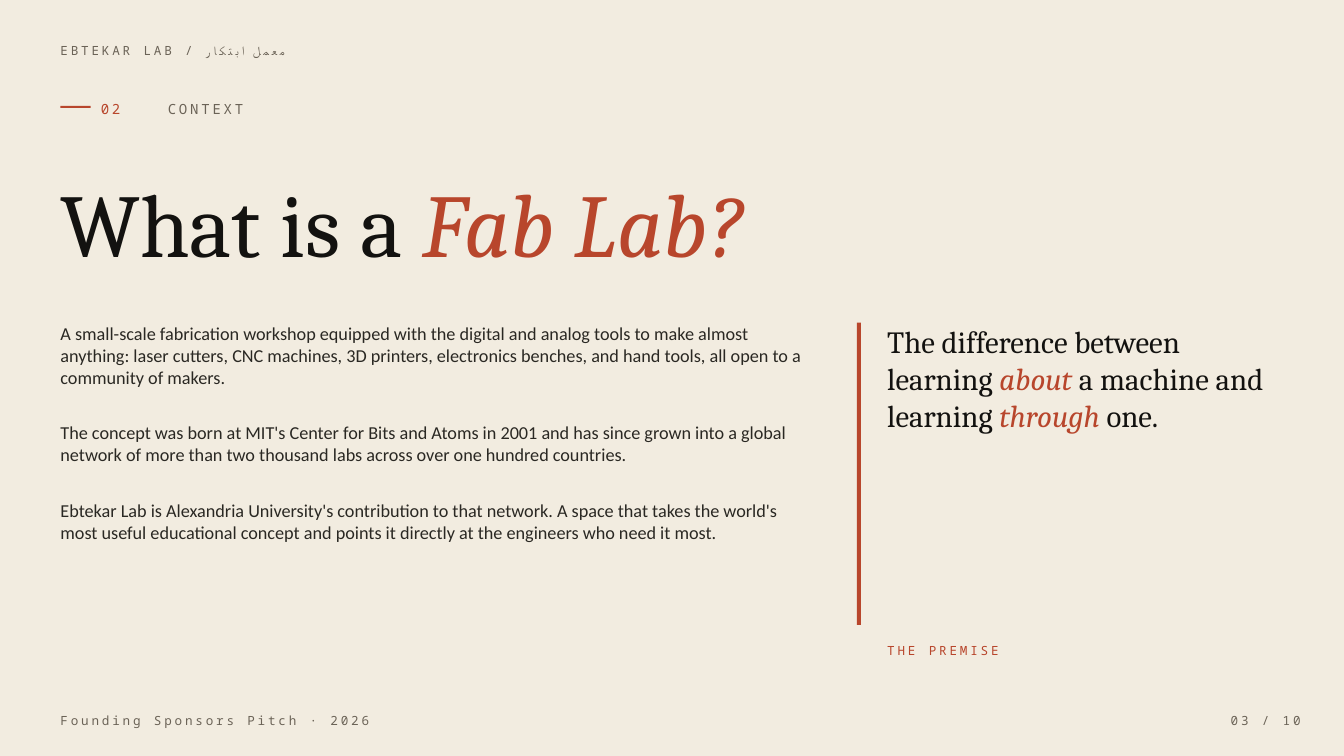
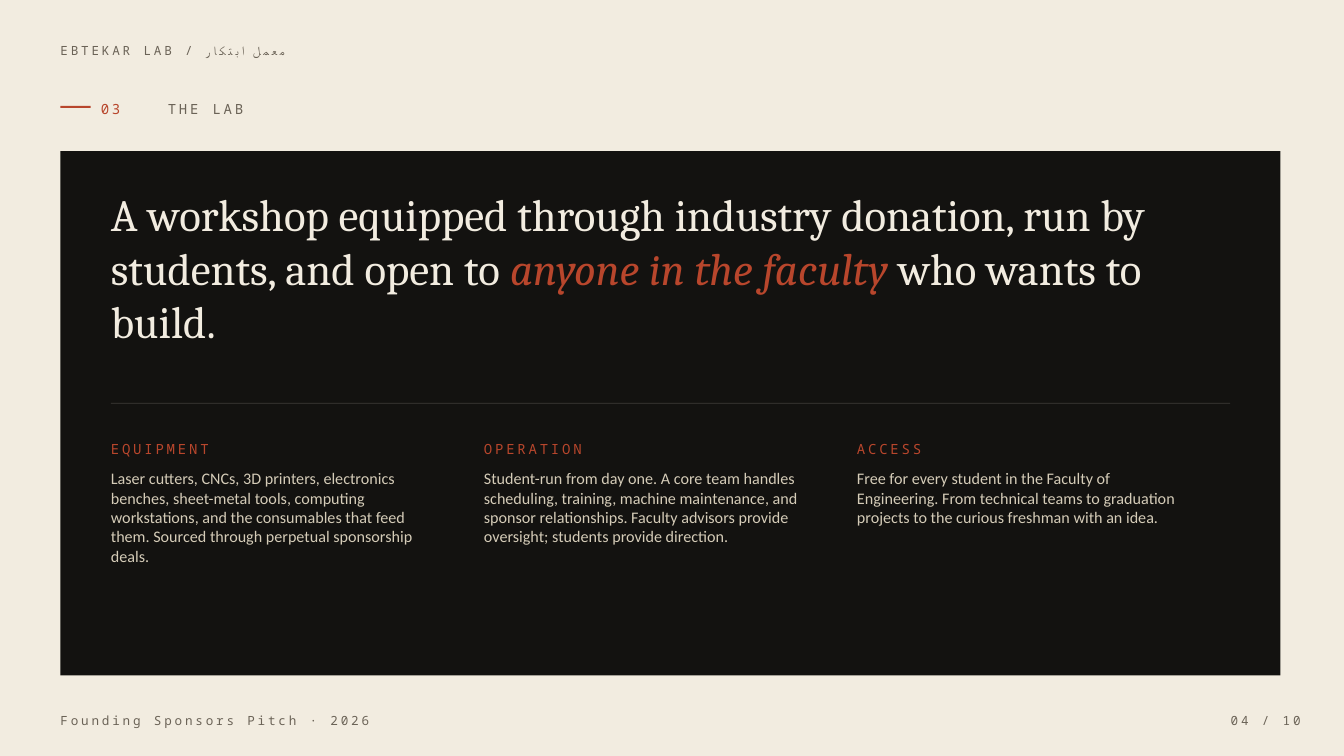
from collections import namedtuple

from lxml.etree import SubElement
from pptx import Presentation
from pptx.dml.color import RGBColor
from pptx.enum.shapes import MSO_CONNECTOR, MSO_SHAPE
from pptx.enum.text import MSO_ANCHOR, MSO_AUTO_SIZE, PP_ALIGN
from pptx.oxml.ns import qn
from pptx.util import Inches, Pt

# Colours
PAPER = RGBColor(0xF2, 0xEC, 0xE0)
INK = RGBColor(0x13, 0x12, 0x10)
BODY = RGBColor(0x2A, 0x28, 0x23)
SAND = RGBColor(0xD5, 0xCC, 0xB8)
MUTED = RGBColor(0x6B, 0x63, 0x57)
RUST = RGBColor(0xB8, 0x46, 0x2C)

# Text styles: font attributes, plus colour and letter spacing in points
MONO = {"name": "Noto Sans Mono", "spacing": 2}
SERIF = {"name": "Cambria", "italic": False}
SANS = {"name": "Calibri"}
FURNITURE = {**MONO, "size": Pt(9), "color": MUTED}
LABEL = {**MONO, "size": Pt(10), "color": RUST}
CAPTION = {**LABEL, "size": Pt(9)}
HEADING = {**SERIF, "size": Pt(64), "color": INK}
QUOTE = {**HEADING, "size": Pt(22)}
STATEMENT = {**HEADING, "size": Pt(32), "color": PAPER}
PROSE = {**SANS, "size": Pt(13), "color": BODY}
DETAIL = {**SANS, "size": Pt(11.5), "color": SAND}
EMPHASIS = {"italic": True, "color": RUST}

# Grid: square cells, ten to the inch
CELL = Inches(0.1)
MARGIN = 6
LABEL_HEIGHT = 3
THIRD = 37  # distance between the starts of two text columns
PAGE_COUNT = 10

Box = namedtuple("Box", "left top width height")


def within(box, left, top, width, height):
    """Return a box placed relative to the corner of another."""
    return Box(box.left + left, box.top + top, width, height)


def cells(*counts):
    return [round(count * CELL) for count in counts]


def format_run(run, style):
    for attribute, value in style.items():
        if attribute == "color":
            run.font.color.rgb = value
        elif attribute == "spacing":
            run.font._element.set("spc", str(value * 100))
        else:
            setattr(run.font, attribute, value)


def write(shape, paragraphs, style, anchor=MSO_ANCHOR.TOP,
          align=PP_ALIGN.LEFT, gap=0, tab=None):
    """Fill a shape; each paragraph is a list of (text, style changes)."""
    frame = shape.text_frame
    settings = {"word_wrap": True, "auto_size": MSO_AUTO_SIZE.NONE,
                "vertical_anchor": anchor, "margin_left": 0,
                "margin_right": 0, "margin_top": 0, "margin_bottom": 0}
    for attribute, value in settings.items():
        setattr(frame, attribute, value)
    for index, parts in enumerate(paragraphs):
        paragraph = frame.add_paragraph() if index else frame.paragraphs[0]
        paragraph.alignment = align
        if index:
            paragraph.space_before = Pt(gap)
        if tab:
            tabs = SubElement(paragraph._p.get_or_add_pPr(), qn("a:tabLst"))
            SubElement(tabs, qn("a:tab"), pos=str(cells(tab)[0]), algn="l")
        for text, changes in parts:
            run = paragraph.add_run()
            run.text = text
            format_run(run, {**style, **changes})


def add_text(slide, box, paragraphs, style, **options):
    write(slide.shapes.add_textbox(*cells(*box)), paragraphs, style, **options)


def add_label(slide, box, text, style, **options):
    add_text(slide, box, [[(text, {})]], style,
             anchor=MSO_ANCHOR.MIDDLE, **options)


def add_block(slide, box, color):
    block = slide.shapes.add_shape(MSO_SHAPE.RECTANGLE, *cells(*box))
    block.shadow.inherit = False
    block.fill.solid()
    block.fill.fore_color.rgb = color
    block.line.fill.background()
    return block


def add_rule(slide, left, top, width):
    """Draw a thin, mostly transparent horizontal line."""
    rule = slide.shapes.add_connector(
        MSO_CONNECTOR.STRAIGHT, *cells(left, top, left + width, top))
    rule.line.width = Pt(0.5)
    rule.line.color.rgb = PAPER
    color = rule.element.xpath(".//a:ln//a:srgbClr")[0]
    SubElement(color, qn("a:alpha"), val="20000")
    SubElement(rule.element.spPr, qn("a:effectLst"))


def set_title(slide, box, parts, style, anchor):
    title = slide.shapes.title
    title.left, title.top, title.width, title.height = cells(*box)
    write(title, [parts], style, anchor=anchor)


def add_section_marker(slide, box, number, name):
    add_block(slide, within(box, 0, 1.2, 3, 0.2), RUST)
    add_text(slide, within(box, 4, 0, box.width - 4, box.height),
             [[(number, {}), ("\t" + name, {"color": MUTED})]],
             LABEL, anchor=MSO_ANCHOR.MIDDLE, tab=6.65)


def add_page(presentation, page, section):
    """Start a slide with its header, section marker and footer."""
    slide = presentation.slides.add_slide(presentation.slide_layouts[5])
    add_label(slide, Box(MARGIN, 3.5, 60, LABEL_HEIGHT),
              "EBTEKAR LAB / معمل ابتكار", FURNITURE)
    add_section_marker(slide, Box(MARGIN, 9.3, 84, LABEL_HEIGHT),
                       f"{page - 1:02}", section)
    add_label(slide, Box(MARGIN, 70, 50, LABEL_HEIGHT),
              "Founding Sponsors Pitch · 2026", FURNITURE)
    add_label(slide, Box(117, 70, 12, LABEL_HEIGHT),
              f"{page:02} / {PAGE_COUNT}", FURNITURE, align=PP_ALIGN.RIGHT)
    return slide


def add_premise(slide, box, parts, caption):
    """Quotation with a bar at its left and a caption below."""
    add_block(slide, within(box, 0, 0, 0.4, box.height), RUST)
    text_box = within(box, 3, 0, box.width - 3, box.height)
    add_text(slide, text_box, [parts], QUOTE)
    add_label(slide, within(text_box, 0, box.height + 1, text_box.width,
                            LABEL_HEIGHT), caption, CAPTION)


def add_topic(slide, box, heading, detail):
    add_label(slide, within(box, 0, 0, box.width, LABEL_HEIGHT), heading, LABEL)
    add_text(slide, within(box, 0, 3.5, box.width, box.height - 3.5),
             [[(detail, {})]], DETAIL)


def add_panel(slide, box, statement, topics):
    """Dark panel: statement, rule and a row of topics."""
    panel = add_block(slide, box, INK)
    slide.shapes.title.element.addprevious(panel.element)
    set_title(slide, within(box, 5, 3.5, 110, 16), statement, STATEMENT,
              MSO_ANCHOR.TOP)
    add_rule(slide, box.left + 5, box.top + 25, box.width - 10)
    for index, (heading, detail) in enumerate(topics):
        add_topic(slide, within(box, 5 + index * THIRD, 28, THIRD - 4, 22.5),
                  heading, detail)


def build_context(presentation):
    slide = add_page(presentation, 3, "CONTEXT")
    set_title(slide, Box(MARGIN, 15, 120, 14),
              [("What is a ", {}), ("Fab Lab?", EMPHASIS)],
              HEADING, MSO_ANCHOR.MIDDLE)
    prose = [
        "A small-scale fabrication workshop equipped with the digital and "
        "analog tools to make almost anything: laser cutters, CNC machines, "
        "3D printers, electronics benches, and hand tools, all open to a "
        "community of makers.",
        "The concept was born at MIT's Center for Bits and Atoms in 2001 and "
        "has since grown into a global network of more than two thousand labs "
        "across over one hundred countries.",
        "Ebtekar Lab is Alexandria University's contribution to that network. "
        "A space that takes the world's most useful educational concept and "
        "points it directly at the engineers who need it most.",
    ]
    add_text(slide, Box(MARGIN, 32, 75, 34),
             [[(text, {})] for text in prose], PROSE, gap=24)
    add_premise(slide, Box(85, 32, 43, 30), [
        ("The difference between learning ", {}), ("about ", EMPHASIS),
        ("a machine and learning ", {}), ("through ", EMPHASIS),
        ("one.", {})], "THE PREMISE")


def build_lab(presentation):
    slide = add_page(presentation, 4, "THE LAB")
    statement = [
        ("A workshop equipped through industry donation, run by students, "
         "and open to ", {}),
        ("anyone in the faculty ", EMPHASIS), ("who wants to build.", {})]
    topics = [
        ("EQUIPMENT",
         "Laser cutters, CNCs, 3D printers, electronics benches, sheet-metal "
         "tools, computing workstations, and the consumables that feed them. "
         "Sourced through perpetual sponsorship deals."),
        ("OPERATION",
         "Student-run from day one. A core team handles scheduling, training, "
         "machine maintenance, and sponsor relationships. Faculty advisors "
         "provide oversight; students provide direction."),
        ("ACCESS",
         "Free for every student in the Faculty of Engineering. From "
         "technical teams to graduation projects to the curious freshman "
         "with an idea."),
    ]
    add_panel(slide, Box(MARGIN, 15, 121, 52), statement, topics)


def main():
    presentation = Presentation()
    presentation.slide_width = Inches(13.33)
    presentation.slide_height = Inches(7.5)
    background = presentation.slide_master.background.fill
    background.solid()
    background.fore_color.rgb = PAPER
    build_context(presentation)
    build_lab(presentation)
    presentation.save("out.pptx")


if __name__ == "__main__":
    main()
